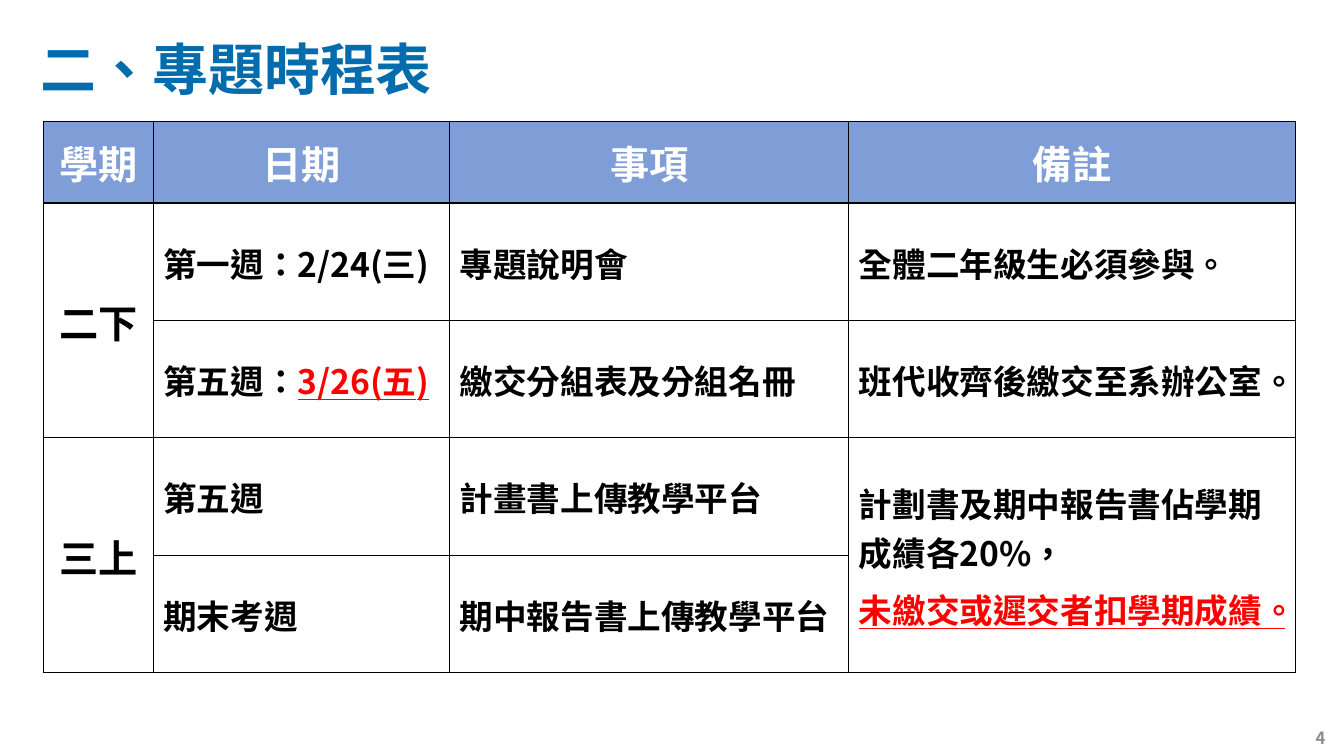
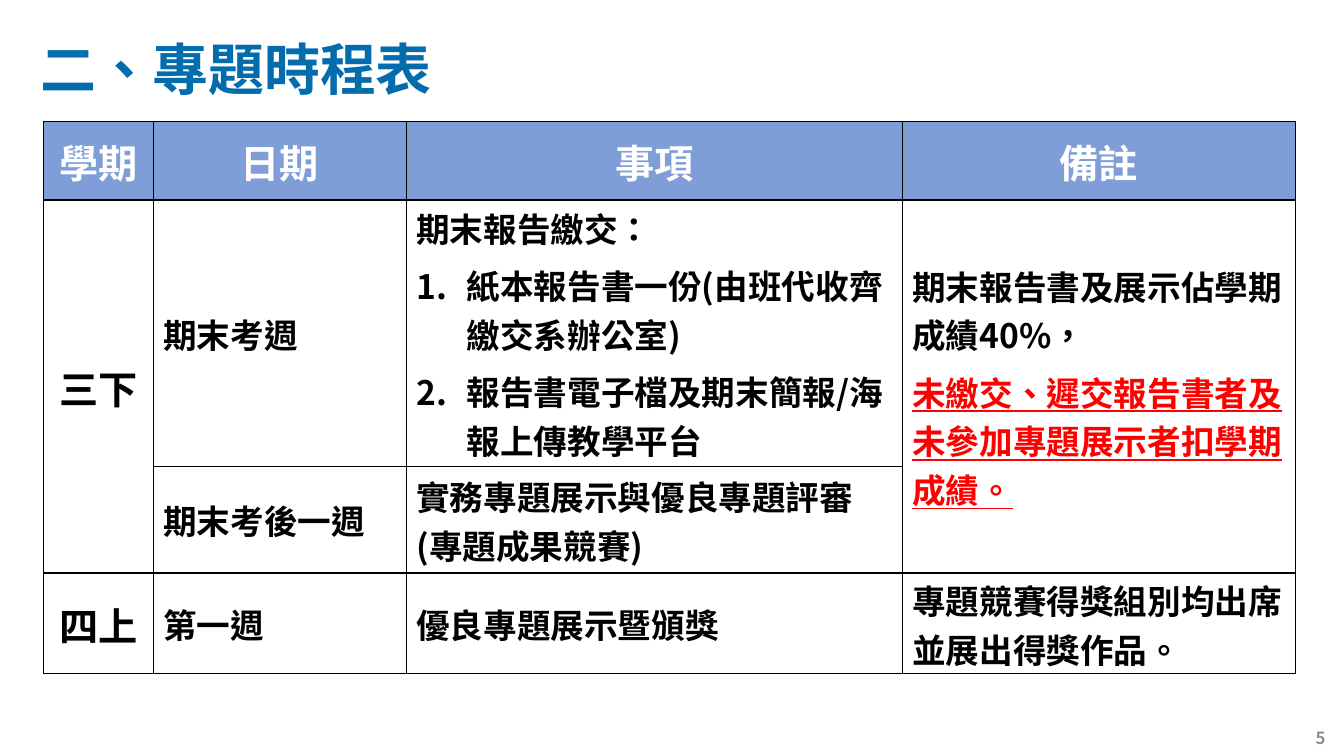
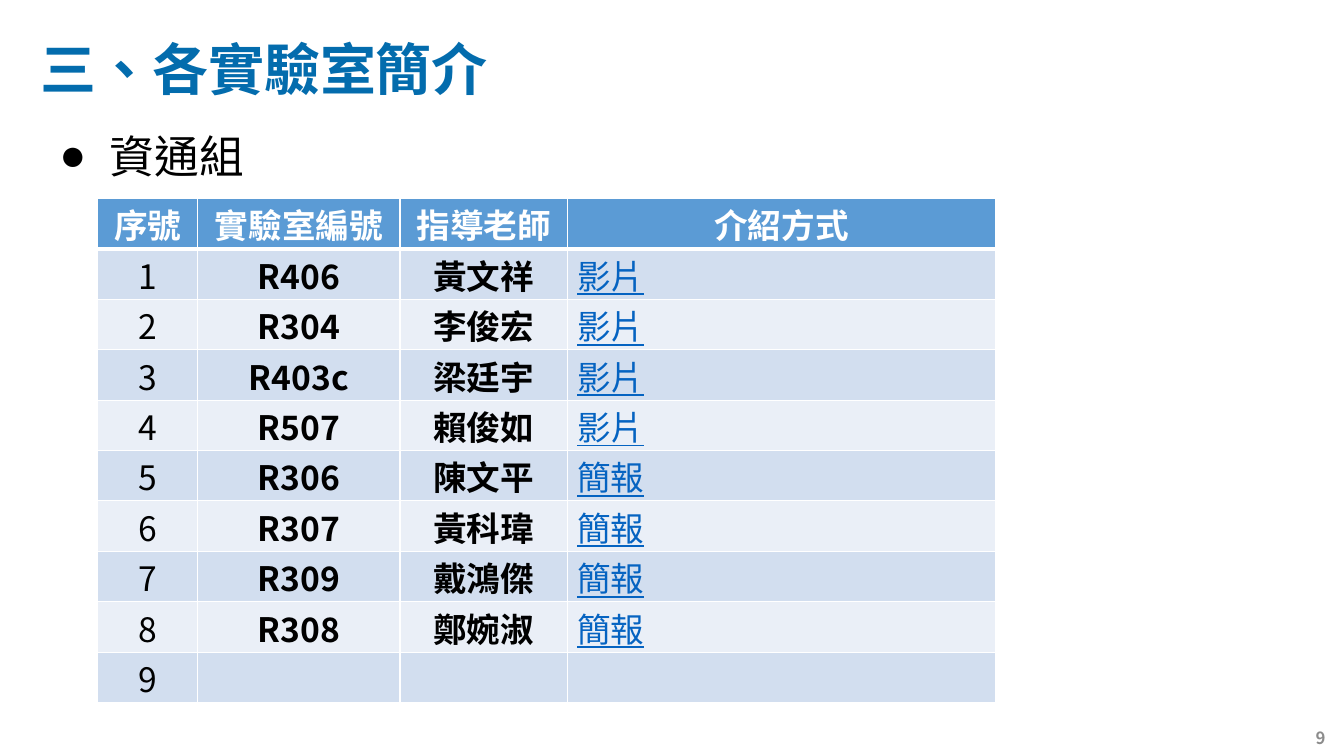
from collections import namedtuple

from pptx import Presentation
from pptx.dml.color import RGBColor
from pptx.enum.text import MSO_ANCHOR as Anchor
from pptx.enum.text import MSO_AUTO_SIZE as AutoSize
from pptx.enum.text import PP_ALIGN as Align
from pptx.oxml.ns import qn
from pptx.oxml.xmlchemy import OxmlElement
from pptx.util import Pt

FONT = "Noto Sans CJK SC"
BLACK, WHITE, RED = "000000", "FFFFFF", "FF0000"
TITLE_BLUE, PAGE_GRAY, LINK_BLUE = "036CAD", "8C8C8C", "0563C1"
SCHEDULE_HEADER, LAB_HEADER = "7F9ED7", "5B9BD5"
LAB_BANDS = ("EAEFF7", "D2DEEF")

Line = namedtuple("Line", "text warning numbered", defaults=("", "", False))

SCHEDULE_HEADINGS = ["學期", "日期", "事項", "備註"]

SECOND_YEAR_ROWS = [
    ["二下", "第一週：2/24(三)", "專題說明會", "全體二年級生必須參與。"],
    [None, [Line("第五週：", "3/26(五)")], "繳交分組表及分組名冊", "班代收齊後繳交至系辦公室。"],
    ["三上", "第五週", "計畫書上傳教學平台",
     [Line("計劃書及期中報告書佔學期成績各20%，"), Line(warning="未繳交或遲交者扣學期成績。")]],
    [None, "期末考週", "期中報告書上傳教學平台", None],
]

THIRD_YEAR_ROWS = [
    ["三下", "期末考週",
     [Line("期末報告繳交："),
      Line("紙本報告書一份(由班代收齊繳交系辦公室)", numbered=True),
      Line("報告書電子檔及期末簡報/海報上傳教學平台", numbered=True)],
     [Line("期末報告書及展示佔學期成績40%，"),
      Line(warning="未繳交、遲交報告書者及未參加專題展示者扣學期成績。")]],
    [None, "期末考後一週", "實務專題展示與優良專題評審(專題成果競賽)", None],
    ["四上", "第一週", "優良專題展示暨頒獎", "專題競賽得獎組別均出席並展出得獎作品。"],
]

LAB_HEADINGS = ["序號", "實驗室編號", "指導老師", "介紹方式"]
LABS = [
    ("R406", "黃文祥", "影片"),
    ("R304", "李俊宏", "影片"),
    ("R403c", "梁廷宇", "影片"),
    ("R507", "賴俊如", "影片"),
    ("R306", "陳文平", "簡報"),
    ("R307", "黃科瑋", "簡報"),
    ("R309", "戴鴻傑", "簡報"),
    ("R308", "鄭婉淑", "簡報"),
    ("", "", ""),
]


def color(value):
    return RGBColor.from_string(value)


def add_child(parent, tag, **attributes):
    child = OxmlElement(tag)
    for name, value in attributes.items():
        child.set(name, str(value))
    parent.append(child)
    return child


def style_paragraph(paragraph, size, hex_color, bold=False, align=Align.LEFT, underline=False):
    paragraph.alignment = align
    paragraph.space_before = Pt(0)
    font = paragraph.font
    font.name, font.size = FONT, Pt(size)
    font.bold, font.underline = bold, underline
    font.color.rgb = color(hex_color)
    properties = paragraph._p.get_or_add_pPr()
    properties.set("hangingPunct", "1")
    defaults = properties.find(qn("a:defRPr"))
    defaults.set("lang", "zh-TW")
    east_asian = OxmlElement("a:ea")
    east_asian.set("typeface", FONT)
    defaults.find(qn("a:latin")).addnext(east_asian)


def add_bullet(paragraph, tag, **attributes):
    properties = paragraph._p.get_or_add_pPr()
    properties.set("marL", str(Pt(36)))
    properties.set("indent", str(-Pt(36)))
    add_child(properties, tag, **attributes)


def place(shape, left, top, width, height):
    shape.left, shape.top = Pt(left), Pt(top)
    shape.width, shape.height = Pt(width), Pt(height)
    frame = shape.text_frame
    frame.word_wrap = True
    frame.auto_size = AutoSize.NONE
    frame.vertical_anchor = Anchor.MIDDLE
    return frame.paragraphs[0]


def add_slide(presentation, layout_index, title, page):
    slide = presentation.slides.add_slide(presentation.slide_layouts[layout_index])
    heading = place(slide.shapes.title, 21.6, 9, 800, 79)
    heading.text = title
    style_paragraph(heading, 40, TITLE_BLUE, bold=True)
    number = place(slide.shapes.add_textbox(0, 0, 0, 0), 738, 512.6, 216, 28.8)
    number.text = str(page)
    style_paragraph(number, 12, PAGE_GRAY, bold=True, align=Align.RIGHT)
    return slide


def add_grid(slide, left, top, widths, heights):
    frame = slide.shapes.add_table(len(heights), len(widths), Pt(left), Pt(top),
                                   Pt(sum(widths)), Pt(sum(heights)))
    table = frame.table
    table.horz_banding = False
    for column, width in zip(table.columns, widths):
        column.width = Pt(width)
    for row, height in zip(table.rows, heights):
        row.height = Pt(height)
    return table


def style_cell(cell, fill, border, top=1, bottom=1, anchor=Anchor.MIDDLE):
    properties = cell._tc.get_or_add_tcPr()
    for side, width in (("L", 1), ("R", 1), ("T", top), ("B", bottom)):
        line = add_child(properties, f"a:ln{side}", w=Pt(width))
        add_child(add_child(line, "a:solidFill"), "a:srgbClr", val=border)
    if fill:
        cell.fill.solid()
        cell.fill.fore_color.rgb = color(fill)
    else:
        cell.fill.background()
    cell.vertical_anchor = anchor
    cell.margin_top, cell.margin_bottom = Pt(1), Pt(0)


def write_cell(cell, text, size, hex_color, **style):
    paragraph = cell.text_frame.paragraphs[0]
    paragraph.text = text
    style_paragraph(paragraph, size, hex_color, **style)


def write_lines(cell, lines):
    frame = cell.text_frame
    for index, line in enumerate(lines):
        paragraph = frame.add_paragraph() if index else frame.paragraphs[0]
        if index < len(lines) - 1:
            paragraph.space_after = Pt(6)
        if line.numbered:
            add_bullet(paragraph, "a:buAutoNum", type="arabicPeriod")
        style_paragraph(paragraph, 24, BLACK, bold=True)
        if line.text:
            paragraph.add_run().text = line.text
        if line.warning:
            run = paragraph.add_run()
            run.text = line.warning
            run.font.color.rgb = color(RED)
            run.font.underline = True


def add_schedule(slide, widths, heights, rows, merged):
    table = add_grid(slide, 31, 86.7, widths, heights)
    for row, contents in enumerate([SCHEDULE_HEADINGS] + rows):
        for column, content in enumerate(contents):
            cell = table.cell(row, column)
            style_cell(cell, None if row else SCHEDULE_HEADER, BLACK)
            if content is None:
                continue
            if row == 0 or column == 0:
                write_cell(cell, content, 28, BLACK if row else WHITE,
                           bold=True, align=Align.CENTER)
            else:
                write_lines(cell, [Line(content)] if isinstance(content, str) else content)
    for row, column in merged:
        table.cell(row, column).merge(table.cell(row + 1, column))


def add_lab_table(slide):
    rows = [LAB_HEADINGS] + [(str(number), *lab) for number, lab in enumerate(LABS, 1)]
    table = add_grid(slide, 69.8, 141.8, [71.3, 144.7, 119.5, 306], [36] * len(rows))
    for row, texts in enumerate(rows):
        for column, text in enumerate(texts):
            cell = table.cell(row, column)
            style_cell(cell, LAB_BANDS[row % 2] if row else LAB_HEADER, WHITE,
                       top=3 if row == 1 else 1, bottom=1 if row else 3, anchor=Anchor.TOP)
            if not text:
                continue
            if row == 0:
                write_cell(cell, text, 24, WHITE, bold=True, align=Align.CENTER)
            elif column == 3:
                write_cell(cell, text, 24, LINK_BLUE, underline=True)
            else:
                write_cell(cell, text, 24, BLACK, bold=column > 0, align=Align.CENTER)


def main():
    presentation = Presentation()
    presentation.slide_width, presentation.slide_height = Pt(960), Pt(540)

    slide = add_slide(presentation, 5, "二、專題時程表", 4)
    add_schedule(slide, [78.5, 211.7, 285.1, 319], [58.3] + [83.9] * 4,
                 SECOND_YEAR_ROWS, [(1, 0), (3, 0), (3, 3)])

    slide = add_slide(presentation, 5, "二、專題時程表", 5)
    add_schedule(slide, [78.5, 180.7, 354.3, 280.8], [56.2, 190.1, 76.3, 72],
                 THIRD_YEAR_ROWS, [(1, 0), (1, 3)])

    slide = add_slide(presentation, 1, "三、各實驗室簡介", 9)
    group = place(slide.placeholders[1], 35.3, 84, 185, 54)
    group.text = "資通組"
    add_bullet(group, "a:buChar", char="●")
    style_paragraph(group, 32, BLACK)
    add_lab_table(slide)

    presentation.save("out.pptx")


if __name__ == "__main__":
    main()
